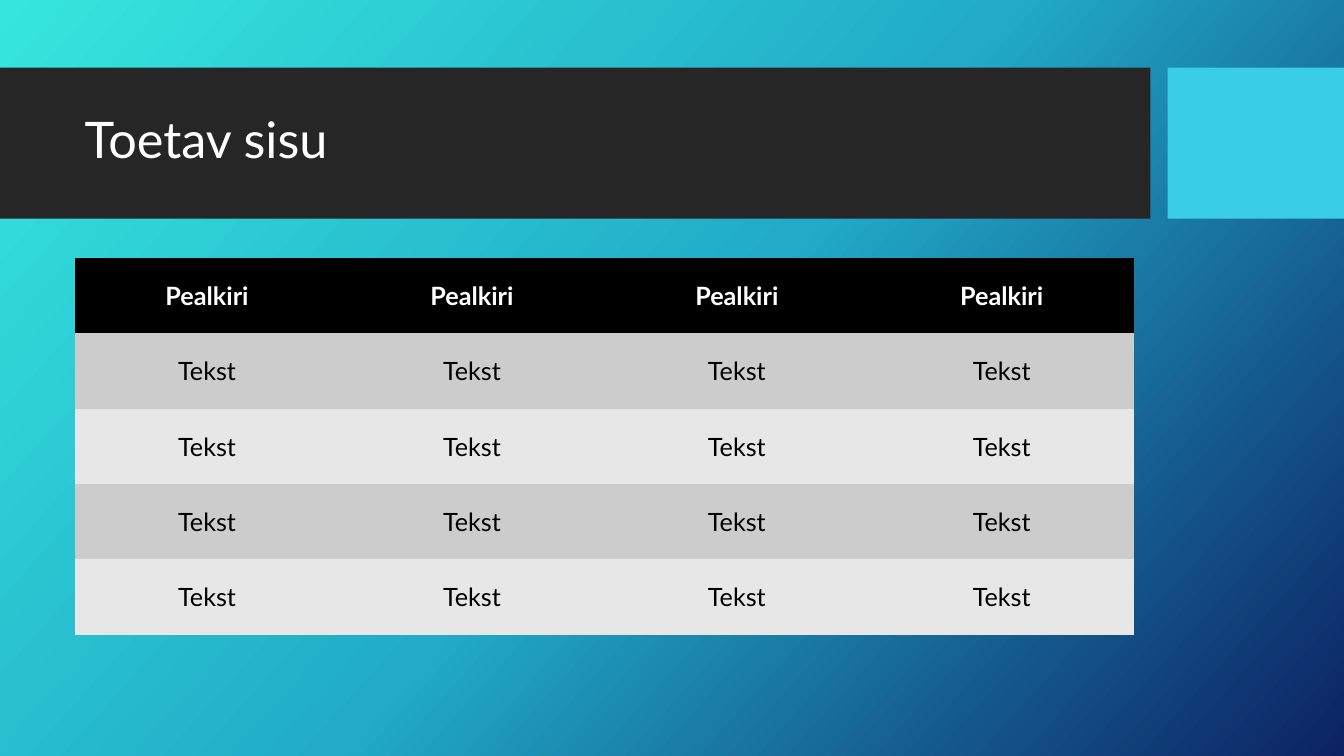
from lxml.etree import SubElement
from pptx import Presentation
from pptx.dml.color import RGBColor
from pptx.enum.text import MSO_ANCHOR, MSO_AUTO_SIZE, PP_ALIGN
from pptx.enum.shapes import MSO_SHAPE
from pptx.oxml.ns import qn
from pptx.util import Inches, Pt

TITLE = "Toetav sisu"
ROWS = [["Pealkiri"] * 4] + [["Tekst"] * 4] * 4

THEME = {
    "font": "Lato",
    "title_size": 36,
    "cell_size": 18,
    "light": "FFFFFF",
    "dark": "000000",
    "title_bar": "262626",
    "accent": "39CDE7",
    "bands": ("CCCCCC", "E7E7E7"),
    "backdrop": ((0, "36E6DD"), (50, "21ABC8"), (100, "0C2263")),
    "backdrop_angle": 42,
}
NO_GRID_STYLE = "{2D5ABB26-0587-4C30-8999-92F81FD0307C}"

WIDTH, HEIGHT = 13.33, 7.5
LEFT, CONTENT_WIDTH = 0.74, 10.51
BAR_TOP, BAR_HEIGHT = 0.67, 1.5
BAR_WIDTH, ACCENT_LEFT = 11.41, 11.58
TITLE_TOP, TITLE_HEIGHT = 0.82, 1.18
TABLE_TOP, TABLE_HEIGHT = 2.56, 3.74


def box(*lengths):
    return [Inches(length) for length in lengths]


def style_text(paragraph, size, color, align, bold=False):
    paragraph.alignment = align
    formats = {"name": THEME["font"], "size": Pt(size), "bold": bold}
    for attribute, value in formats.items():
        setattr(paragraph.font, attribute, value)
    paragraph.font.color.rgb = RGBColor.from_string(color)


def paint_backdrop(slide):
    fill = slide.background.fill
    fill.gradient()
    fill.gradient_angle = 360 - THEME["backdrop_angle"]
    stops = next(slide.element.iter(qn("a:gsLst")))
    for stop in list(stops):
        stops.remove(stop)
    for percent, color in THEME["backdrop"]:
        stop = SubElement(stops, qn("a:gs"), pos=str(percent * 1000))
        SubElement(stop, qn("a:srgbClr"), val=color)


def add_bar(slide, left, width, color):
    bar = slide.shapes.add_shape(
        MSO_SHAPE.RECTANGLE, *box(left, BAR_TOP, width, BAR_HEIGHT))
    bar.shadow.inherit = False
    bar.fill.solid()
    bar.fill.fore_color.rgb = RGBColor.from_string(color)
    bar.line.fill.background()


def place_title(slide):
    """Fill the title placeholder and bring it in front of the bars."""
    title = slide.shapes.title
    title.left, title.top, title.width, title.height = box(
        LEFT, TITLE_TOP, CONTENT_WIDTH, TITLE_HEIGHT)
    frame = title.text_frame
    frame.text = TITLE
    frame.auto_size = MSO_AUTO_SIZE.NONE
    frame.vertical_anchor = MSO_ANCHOR.MIDDLE
    heading = frame.paragraphs[0]
    heading.line_spacing = 0.9
    style_text(heading, THEME["title_size"], THEME["light"], PP_ALIGN.LEFT)
    slide.shapes.element.append(title.element)


def add_content_table(slide):
    table = slide.shapes.add_table(
        len(ROWS), len(ROWS[0]),
        *box(LEFT, TABLE_TOP, CONTENT_WIDTH, TABLE_HEIGHT)).table
    next(table._tbl.iter(qn("a:tableStyleId"))).text = NO_GRID_STYLE
    for r, row in enumerate(ROWS):
        header = r == 0
        band = THEME["dark"] if header else THEME["bands"][(r - 1) % 2]
        color = THEME["light"] if header else THEME["dark"]
        for c, words in enumerate(row):
            cell = table.cell(r, c)
            cell.text = words
            cell.vertical_anchor = MSO_ANCHOR.MIDDLE
            cell.fill.solid()
            cell.fill.fore_color.rgb = RGBColor.from_string(band)
            style_text(cell.text_frame.paragraphs[0], THEME["cell_size"],
                       color, PP_ALIGN.CENTER, bold=header)


def main():
    deck = Presentation()
    deck.slide_width, deck.slide_height = box(WIDTH, HEIGHT)
    slide = deck.slides.add_slide(deck.slide_layouts.get_by_name("Title Only"))
    paint_backdrop(slide)
    add_bar(slide, 0, BAR_WIDTH, THEME["title_bar"])
    add_bar(slide, ACCENT_LEFT, WIDTH - ACCENT_LEFT, THEME["accent"])
    place_title(slide)
    add_content_table(slide)
    deck.save("out.pptx")


if __name__ == "__main__":
    main()
